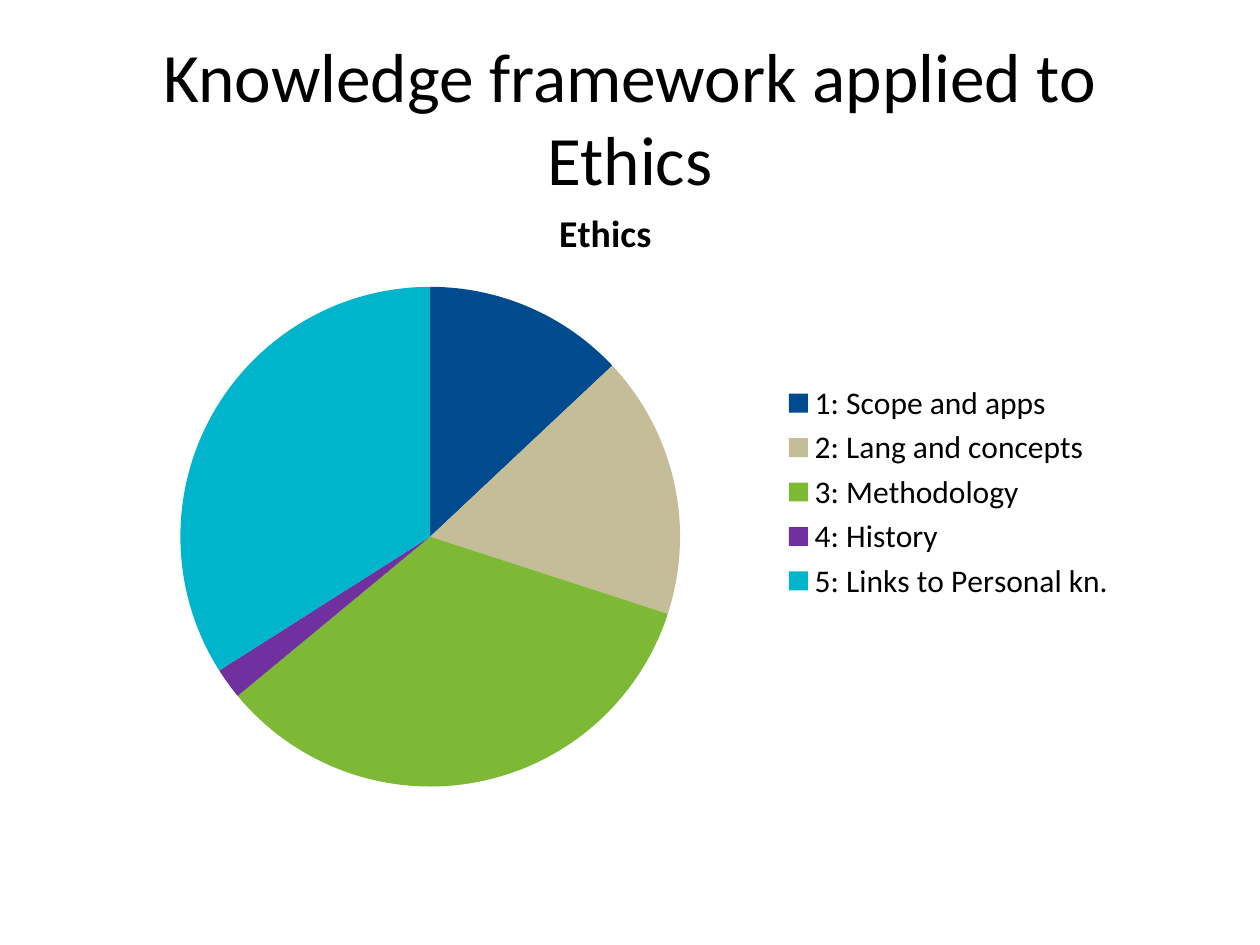
import pptx
import pptx.chart.data
import pptx.dml.color
import pptx.enum.chart
import pptx.enum.text
import pptx.util

Pt = pptx.util.Pt
RGB = pptx.dml.color.RGBColor
BLACK = RGB(0x00, 0x00, 0x00)
NAVY = RGB(0x00, 0x4B, 0x8D)
SAND = RGB(0xC4, 0xBD, 0x97)
GREEN = RGB(0x7D, 0xB9, 0x35)
PURPLE = RGB(0x70, 0x30, 0xA0)
CYAN = RGB(0x00, 0xB5, 0xCB)
FACE = "Calibri"

PARTS = [
    ("1: Scope and apps", 13, NAVY),
    ("2: Lang and concepts", 17, SAND),
    ("3: Methodology", 34, GREEN),
    ("4: History", 2, PURPLE),
    ("5: Links to Personal kn.", 34, CYAN),
]


def style(font, size, bold=False):
    font.name = FACE
    font.size = Pt(size)
    font.bold = bold
    font.color.rgb = BLACK


def add_title(slide, box, text):
    title = slide.shapes.title
    title.left, title.top, title.width, title.height = map(Pt, box)
    frame = title.text_frame
    frame.text = text
    frame.word_wrap = True
    frame.auto_size = pptx.enum.text.MSO_AUTO_SIZE.NONE
    frame.vertical_anchor = pptx.enum.text.MSO_ANCHOR.MIDDLE
    para = frame.paragraphs[0]
    para.alignment = pptx.enum.text.PP_ALIGN.CENTER
    style(para.font, 39.6)


def add_pie(slide, box, name, parts):
    labels, values, colors = zip(*parts)
    data = pptx.chart.data.CategoryChartData()
    data.categories = labels
    data.add_series(name, values)
    kind = pptx.enum.chart.XL_CHART_TYPE.PIE
    chart = slide.shapes.add_chart(kind, *map(Pt, box), data).chart
    style(chart.font, 18)

    chart.has_title = True
    head = chart.chart_title
    head.include_in_layout = False
    head.text_frame.text = name
    style(head.text_frame.paragraphs[0].font, 21.6, True)

    chart.has_legend = True
    chart.legend.position = pptx.enum.chart.XL_LEGEND_POSITION.RIGHT
    chart.legend.include_in_layout = False

    plot = chart.plots[0]
    plot.vary_by_categories = True
    for index, color in enumerate(colors):
        fill = plot.series[0].points[index].format.fill
        fill.solid()
        fill.fore_color.rgb = color


def main():
    deck = pptx.Presentation()
    deck.slide_width, deck.slide_height = Pt(720), Pt(540)
    slide = deck.slides.add_slide(deck.slide_layouts[5])
    add_title(slide, (36, 21.6, 648, 90), "Knowledge framework applied to Ethics")
    add_pie(slide, (46.8, 103, 598.3, 356.4), "Ethics", PARTS)
    deck.save("out.pptx")


if __name__ == "__main__":
    main()
